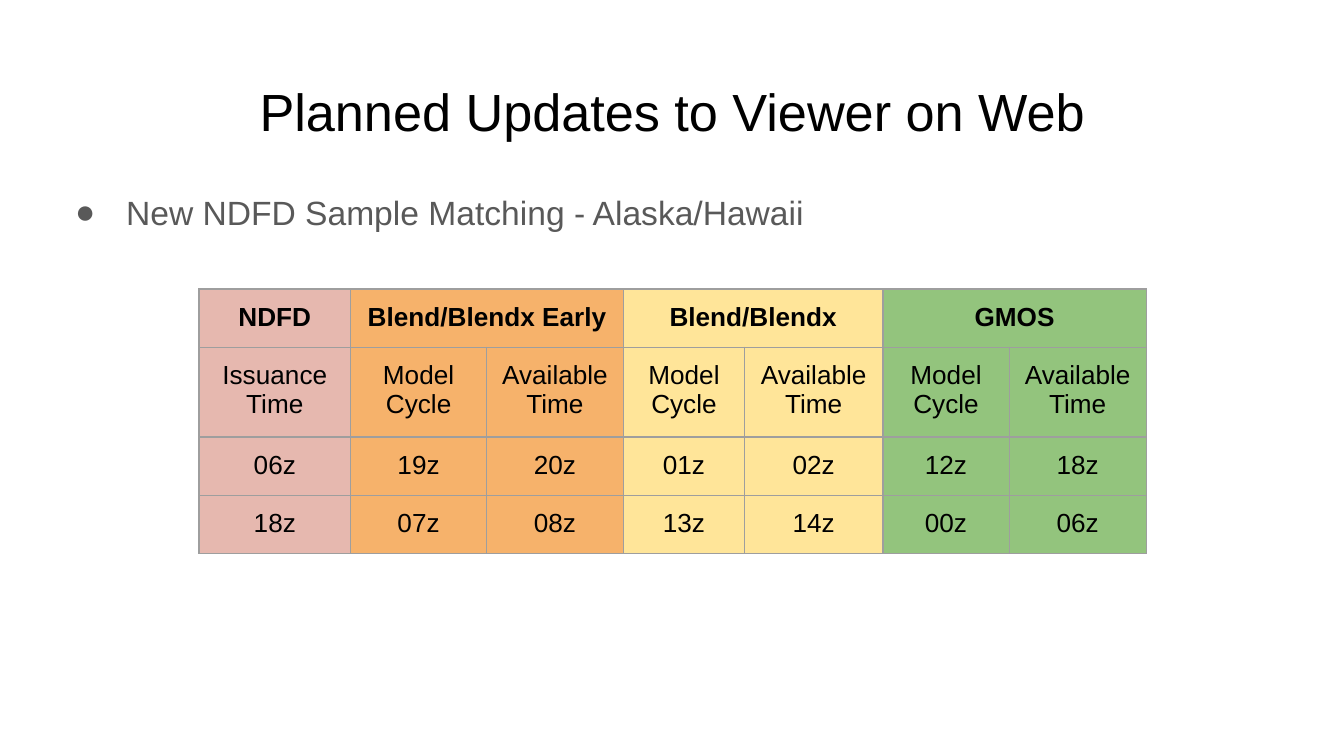
from dataclasses import dataclass

from lxml import etree
from pptx import Presentation
from pptx import util as u
from pptx.dml.color import RGBColor
from pptx.enum import text as t
from pptx.oxml import ns


@dataclass(frozen=True)
class Theme:
    font: str = "Arial"
    ink: str = "000000"
    gray: str = "595959"
    rule: str = "9E9E9E"
    rose: str = "E6B8AF"
    orange: str = "F6B26B"
    yellow: str = "FFE599"
    green: str = "93C47D"
    title: int = 28
    body: int = 18
    cell: int = 14


THEME = Theme()
PAD = u.Inches(0.1)
GROUPS = [
    ("NDFD", THEME.rose, 1),
    ("Blend/Blendx Early", THEME.orange, 2),
    ("Blend/Blendx", THEME.yellow, 2),
    ("GMOS", THEME.green, 2),
]
ROWS = [
    ["Issuance Time"] + ["Model Cycle", "Available Time"] * 3,
    ["06z", "19z", "20z", "01z", "02z", "12z", "18z"],
    ["18z", "07z", "08z", "13z", "14z", "00z", "06z"],
]
WIDTHS = [1.13, 1.01, 1.02, 0.9, 1.03, 0.94, 1.02]
HEIGHTS = [0.37, 0.62, 0.36, 0.37]


def write(frame, words, size, color=THEME.ink, bold=False, align=None):
    para = frame.paragraphs[0]
    para.alignment = align
    run = para.add_run()
    run.text = words
    font = run.font
    font.name, font.size, font.bold = THEME.font, u.Pt(size), bold
    font.color.rgb = RGBColor.from_string(color)
    return para


def add_node(parent, tag, **attrs):
    return etree.SubElement(parent, ns.qn(tag), **attrs)


def add_box(slide, top, height):
    box = slide.shapes.add_textbox(
        u.Inches(0.34), u.Inches(top), u.Inches(9.32), u.Inches(height))
    frame = box.text_frame
    frame.word_wrap = True
    frame.margin_left = frame.margin_right = PAD
    frame.margin_top = frame.margin_bottom = PAD
    return frame


def add_bullet(para, size, color):
    para.line_spacing = 1.15
    props = para._p.get_or_add_pPr()
    props.set("marL", str(u.Inches(0.5)))
    props.set("indent", str(u.Inches(-0.38)))
    add_node(add_node(props, "a:buClr"), "a:srgbClr", val=color)
    add_node(props, "a:buSzPts", val=str(size * 100))
    add_node(props, "a:buFont", typeface=THEME.font)
    add_node(props, "a:buChar", char="●")


def style_cell(cell, color):
    cell.margin_left = cell.margin_right = PAD
    cell.margin_top = cell.margin_bottom = PAD
    props = cell._tc.get_or_add_tcPr()
    for side in "LRTB":
        line = add_node(props, f"a:ln{side}", w=str(u.Pt(0.75)))
        add_node(add_node(line, "a:solidFill"), "a:srgbClr", val=THEME.rule)
    cell.fill.solid()
    cell.fill.fore_color.rgb = RGBColor.from_string(color)


def add_grid(slide):
    grid = slide.shapes.add_table(
        len(HEIGHTS), len(WIDTHS), u.Inches(1.48), u.Inches(2.15),
        u.Inches(sum(WIDTHS)), u.Inches(sum(HEIGHTS))).table
    for col, width in zip(grid.columns, WIDTHS):
        col.width = u.Inches(width)
    for row, height in zip(grid.rows, HEIGHTS):
        row.height = u.Inches(height)
    center = t.PP_ALIGN.CENTER
    start = 0
    for name, color, span in GROUPS:
        for col in range(start, start + span):
            for row in range(len(HEIGHTS)):
                style_cell(grid.cell(row, col), color)
            for row, words in enumerate(ROWS, 1):
                write(grid.cell(row, col).text_frame, words[col],
                      size=THEME.cell, align=center)
        head = grid.cell(0, start)
        if span > 1:
            head.merge(grid.cell(0, start + span - 1))
        write(head.text_frame, name, size=THEME.cell, bold=True, align=center)
        start += span


def main():
    deck = Presentation()
    deck.slide_width = u.Inches(10)
    deck.slide_height = u.Inches(10 * 9 / 16)
    slide = deck.slides.add_slide(deck.slide_layouts[6])
    write(add_box(slide, 0.49, 0.63), "Planned Updates to Viewer on Web",
          size=THEME.title, align=t.PP_ALIGN.CENTER)
    point = write(add_box(slide, 1.28, 0.47),
                  "New NDFD Sample Matching - Alaska/Hawaii",
                  size=THEME.body, color=THEME.gray)
    add_bullet(point, THEME.body, THEME.gray)
    add_grid(slide)
    deck.save("out.pptx")


if __name__ == "__main__":
    main()
